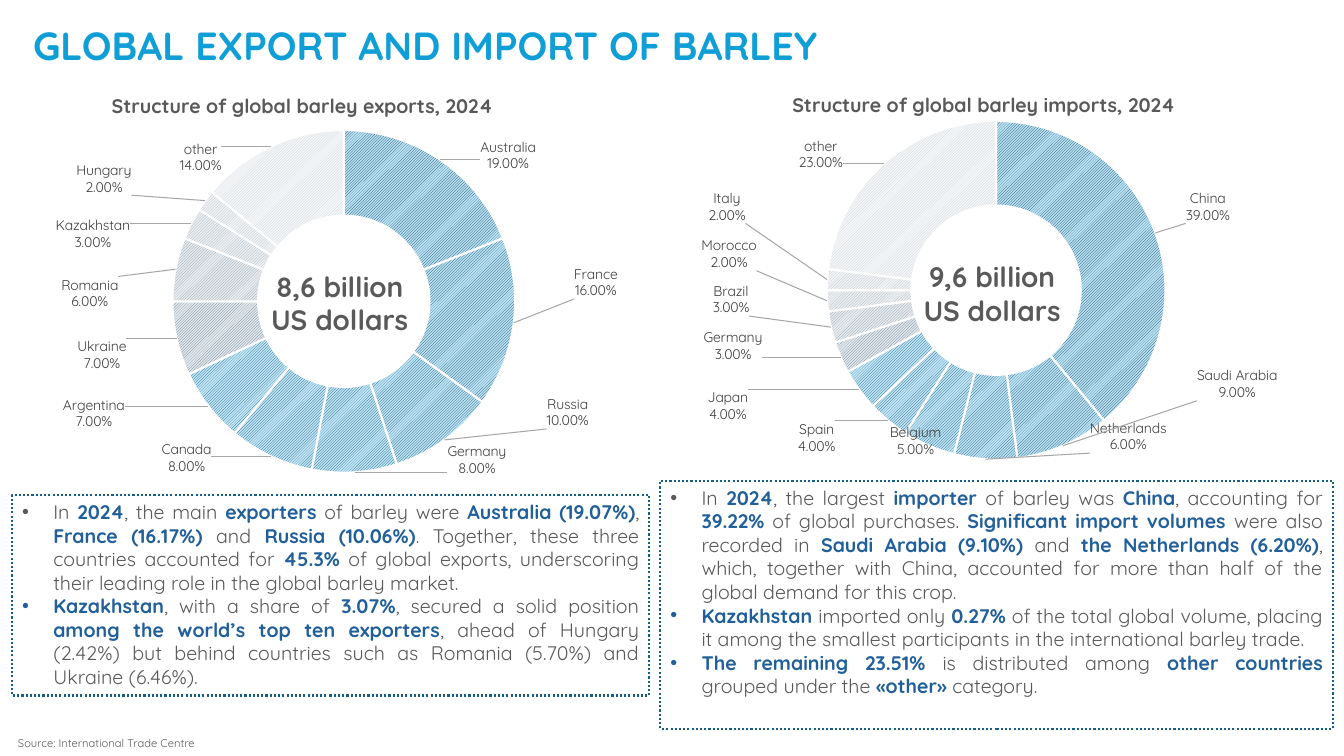
from copy import deepcopy
from dataclasses import dataclass
from itertools import accumulate
from math import cos, pi, sin

from lxml import etree
from pptx import Presentation
from pptx import util as u
from pptx.chart.data import CategoryChartData
from pptx.dml.color import RGBColor
from pptx.enum import chart as charts, dml, shapes, text
from pptx.oxml import parse_xml
from pptx.oxml.ns import nsdecls, qn


@dataclass(frozen=True)
class Theme:
    font: str = "Quicksand"
    chart_font: str = "Roboto"
    title: str = "0F9ED5"
    body: str = "595959"
    emphasis: str = "215F9A"
    frame: str = "156082"
    label: str = "404040"
    leader: str = "A6A6A6"
    white: str = "FFFFFF"
    black: str = "000000"
    title_size: int = 28
    total_size: int = 20
    body_size: int = 14
    label_size: int = 10
    source_size: int = 8
    heading_spacing: float = 29.5
    hatch: tuple = (
        ("0E4158", "B9E1F4"), ("104963", "BBE2F4"), ("11506C", "BDE3F4"),
        ("135573", "BEE4F5"), ("145B7B", "C0E4F5"), ("156082", "C1E5F5"),
        ("638097", "E0E6EA"), ("879AAA", "E7EBEE"), ("A2AFBB", "ECEFF1"),
        ("B6BFC8", "F0F2F4"), ("C9D0D6", "F4F6F7"),
    )


def rgb(value):
    return RGBColor.from_string(value)


class SlideBuilder:
    def __init__(self, slide, theme):
        self.slide = slide
        self.theme = theme

    def style(self, font, size, color, bold=False, name=None):
        font.name = name or self.theme.font
        font.size = u.Pt(size)
        font.bold = bold
        font.color.rgb = rgb(color)

    def rectangle(self, box):
        panel = self.slide.shapes.add_shape(
            shapes.MSO_SHAPE.RECTANGLE, *map(u.Inches, box))
        panel.shadow.inherit = False
        panel.text_frame.word_wrap = True
        return panel

    def fill_text(self, frame, wording, size, color, bold=False,
                  align=text.PP_ALIGN.LEFT, spacing=None):
        frame.word_wrap = True
        frame.text = wording
        line = frame.paragraphs[0]
        line.alignment = align
        if spacing:
            line.line_spacing = u.Pt(spacing)
        self.style(line.runs[0].font, size, color, bold)

    def title(self, box, wording):
        banner = self.rectangle(box)
        banner.fill.solid()
        banner.fill.fore_color.rgb = rgb(self.theme.white)
        banner.line.fill.background()
        self.fill_text(banner.text_frame, wording, self.theme.title_size,
                       self.theme.title, True, spacing=self.theme.heading_spacing)

    def caption(self, box, wording, size, **options):
        caption = self.slide.shapes.add_textbox(*map(u.Inches, box))
        self.fill_text(caption.text_frame, wording, size, self.theme.body, **options)

    def commentary(self, box, points):
        panel = self.rectangle(box)
        panel.fill.background()
        panel.line.color.rgb = rgb(self.theme.frame)
        panel.line.width = u.Pt(1.5)
        panel.line.dash_style = dml.MSO_LINE.ROUND_DOT
        frame = panel.text_frame
        frame.vertical_anchor = text.MSO_ANCHOR.TOP
        for index, point in enumerate(points):
            line = frame.add_paragraph() if index else frame.paragraphs[0]
            line.alignment = text.PP_ALIGN.JUSTIFY
            properties = line._p.get_or_add_pPr()
            properties.set("marL", str(u.Inches(0.31)))
            properties.set("indent", str(u.Inches(-0.31)))
            etree.SubElement(properties, qn("a:buFont"), typeface="Arial")
            etree.SubElement(properties, qn("a:buChar"), char="•")
            for position, phrase in enumerate(point.split("**")):
                if phrase:
                    strong = position % 2 == 1
                    run = line.add_run()
                    run.text = phrase
                    color = self.theme.emphasis if strong else self.theme.body
                    self.style(run.font, self.theme.body_size, color, strong)

    def doughnut(self, box, center, radius, shares):
        left, top, width, height = box
        countries, values, places = zip(*shares)
        data = CategoryChartData(number_format="0.00%")
        data.categories = countries
        data.add_series("Series 1", values)
        chart = self.slide.shapes.add_chart(
            charts.XL_CHART_TYPE.DOUGHNUT, *map(u.Inches, box), data).chart
        chart.has_legend = False
        chart.has_title = False
        self.style(chart.font, self.theme.label_size, self.theme.black,
                   name=self.theme.chart_font)
        ring = chart.plots[0]
        ring.vary_by_categories = True
        ring._element.find(qn("c:holeSize")).set("val", "70")
        self.place_ring(chart, ((center[0] - radius - left) / width,
                                (center[1] - radius - top) / height,
                                2 * radius / width, 2 * radius / height))
        series = ring.series[0]
        for index, (ink, paper) in enumerate(self.theme.hatch):
            segment = series.points[index].format
            segment.fill.patterned()
            segment.fill.pattern = dml.MSO_PATTERN.LIGHT_UPWARD_DIAGONAL
            segment.fill.fore_color.rgb = rgb(ink)
            segment.fill.back_color.rgb = rgb(paper)
            segment.line.color.rgb = rgb(self.theme.white)
            segment.line.width = u.Pt(1.5)
        offsets = []
        for end, value, (x, y) in zip(accumulate(values), values, places):
            angle = 2 * pi * (end - value / 2) / sum(values)
            offsets.append(((x - center[0] - 0.75 * radius * sin(angle)) / width,
                            (y - center[1] + 0.75 * radius * cos(angle)) / height))
        self.label_segments(series.data_labels, offsets)

    def place_ring(self, chart, fractions):
        area = chart._chartSpace.chart.plotArea
        for old in area.findall(qn("c:layout")):
            area.remove(old)
        sides = "".join(f'<c:{side} val="{value:.4f}"/>'
                        for side, value in zip("xywh", fractions))
        area.insert(0, parse_xml(
            f'<c:layout {nsdecls("c")}><c:manualLayout><c:layoutTarget val="inner"/>'
            f'<c:xMode val="edge"/><c:yMode val="edge"/>{sides}'
            '</c:manualLayout></c:layout>'))

    def label_segments(self, labels, offsets):
        labels.show_value = True
        labels.show_category_name = True
        labels.number_format = "0.00%"
        labels.number_format_is_linked = False
        self.style(labels.font, self.theme.label_size, self.theme.label)
        group = labels._element
        group.find(qn("c:txPr")).find(qn("a:bodyPr")).set("wrap", "none")
        for old in group.findall(qn("c:showLeaderLines")):
            group.remove(old)
        separator = etree.SubElement(group, qn("c:separator"))
        separator.text = "\n"
        shared = list(group)
        for index, (x, y) in enumerate(offsets):
            label = parse_xml(
                f'<c:dLbl {nsdecls("c")}><c:idx val="{index}"/><c:layout><c:manualLayout>'
                f'<c:x val="{x:.4f}"/><c:y val="{y:.4f}"/></c:manualLayout></c:layout>'
                '</c:dLbl>')
            label.extend(deepcopy(shared))
            group.insert(index, label)
        etree.SubElement(group, qn("c:showLeaderLines"), val="1")
        group.append(parse_xml(
            f'<c:leaderLines {nsdecls("c", "a")}><c:spPr><a:ln w="9525"><a:solidFill>'
            f'<a:srgbClr val="{self.theme.leader}"/></a:solidFill></a:ln></c:spPr>'
            '</c:leaderLines>'))


EXPORTS = (
    ("Australia", 0.19, (5.04, 1.54)), ("France", 0.16, (5.91, 2.8)),
    ("Russia", 0.1, (5.63, 4.09)), ("Germany", 0.08, (4.73, 4.56)),
    ("Canada", 0.08, (1.85, 4.54)), ("Argentina", 0.07, (0.93, 4.1)),
    ("Ukraine", 0.07, (1.01, 3.52)), ("Romania", 0.06, (0.89, 2.91)),
    ("Kazakhstan", 0.03, (0.92, 2.32)), ("Hungary", 0.02, (1.03, 1.77)),
    ("other", 0.14, (1.99, 1.56)),
)
IMPORTS = (
    ("China", 0.39, (11.98, 2.05)), ("Saudi Arabia", 0.09, (12.27, 3.81)),
    ("Netherlands", 0.06, (11.19, 4.33)), ("Belgium", 0.05, (9.08, 4.37)),
    ("Spain", 0.04, (8.1, 4.34)), ("Japan", 0.04, (7.22, 4.03)),
    ("Germany", 0.03, (7.27, 3.43)), ("Brazil", 0.03, (7.25, 2.97)),
    ("Morocco", 0.02, (7.23, 2.52)), ("Italy", 0.02, (7.21, 2.05)),
    ("other", 0.23, (8.14, 1.53)),
)
EXPORT_NOTES = (
    "In **2024**, the main **exporters** of barley were **Australia (19.07%)**, **France (16.17%)** and **Russia (10.06%)**. Together, these three countries accounted for **45.3%** of global exports, underscoring their leading role in the global barley market.",
    "**Kazakhstan**, with a share of **3.07%**, secured a solid position **among the world’s top ten exporters**, ahead of Hungary (2.42%) but behind countries such as Romania (5.70%) and Ukraine (6.46%).",
)
IMPORT_NOTES = (
    "In **2024**, the largest **importer** of barley was **China**, accounting for **39.22%** of global purchases. **Significant import volumes **were also recorded in **Saudi Arabia (9.10%) **and **the Netherlands (6.20%)**, which, together with China, accounted for more than half of the global demand for this crop.",
    "**Kazakhstan** imported only **0.27%** of the total global volume, placing it among the smallest participants in the international barley trade.",
    "**The remaining 23.51% **is distributed among **other countries **grouped under the **«other»** category.",
)


def main():
    deck = Presentation()
    deck.slide_width, deck.slide_height = u.Inches(13.33), u.Inches(7.5)
    theme = Theme()
    page = SlideBuilder(deck.slides.add_slide(deck.slide_layouts[6]), theme)
    page.doughnut((0.3, 1.14, 6.15, 3.7), (3.41, 2.99), 1.7, EXPORTS)
    page.doughnut((6.77, 1.05, 6.15, 3.7), (9.88, 2.88), 1.68, IMPORTS)
    page.title((0.23, 0.22, 12.98, 0.51), "GLOBAL EXPORT AND IMPORT OF BARLEY")
    for left, top, flow in ((1.01, 0.71, "exports"), (7.76, 0.7, "imports")):
        page.caption((left, top, 5.26, 0.45), f"Structure of global barley {flow}, 2024",
                     theme.body_size, bold=True, spacing=theme.heading_spacing)
    page.commentary((0.12, 4.91, 6.32, 1.99), EXPORT_NOTES)
    page.commentary((6.55, 4.77, 6.67, 2.46), IMPORT_NOTES)
    for left, top, total in ((2.48, 2.62, "8,6"), (8.95, 2.53, "9,6")):
        page.caption((left, top, 1.78, 0.77), f"{total} billion US dollars",
                     theme.total_size, bold=True, align=text.PP_ALIGN.CENTER)
    page.caption((0.08, 7.26, 8.31, 0.24), "Source: International Trade Centre",
                 theme.source_size)
    deck.save("out.pptx")


if __name__ == "__main__":
    main()
